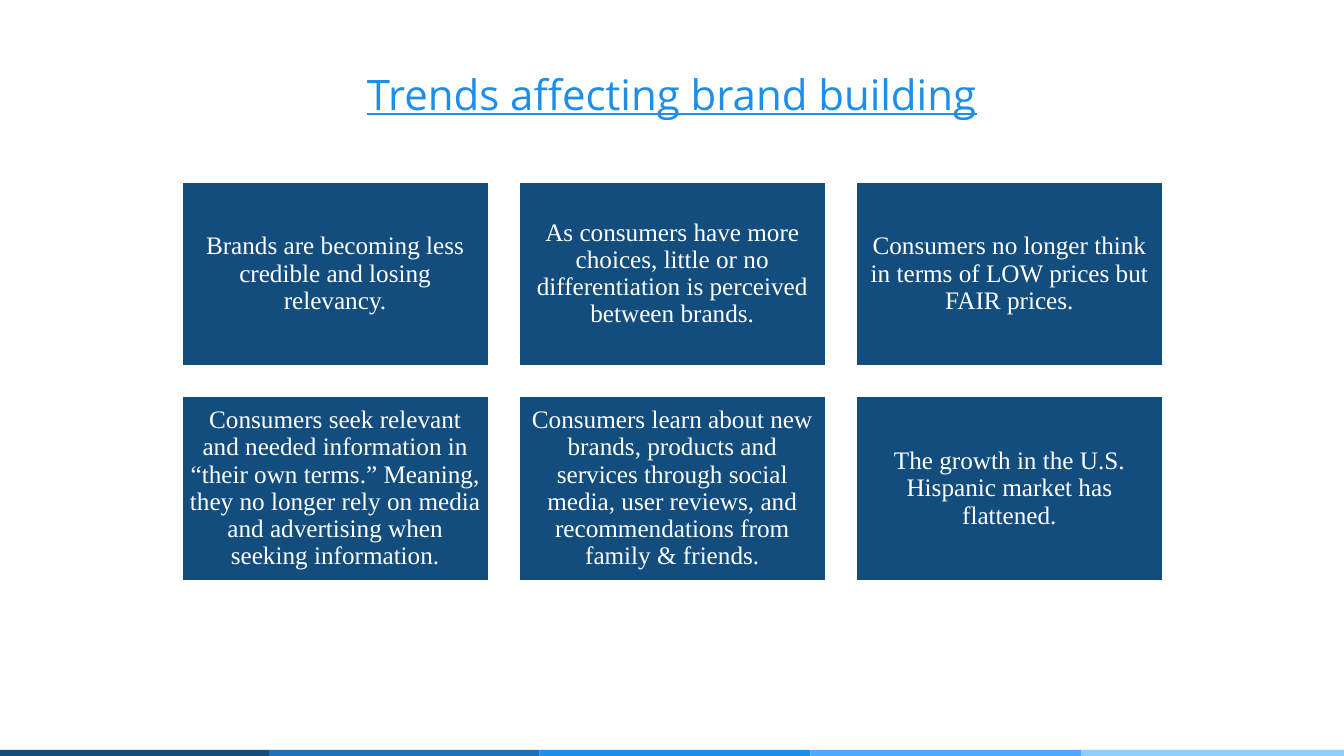
from pptx import Presentation
from pptx.dml.color import RGBColor
from pptx.enum.shapes import MSO_SHAPE
from pptx.enum.text import MSO_ANCHOR, PP_ALIGN
from pptx.util import Inches, Pt

COLORS = {
    "navy": "134D7E",
    "blue": "1971BB",
    "bright": "1D8EEA",
    "sky": "4EAAFF",
    "pale": "8BCEFF",
    "white": "FFFFFF",
}

TRENDS = [
    "Brands are becoming less credible and losing relevancy.",
    "As consumers have more choices, little or no differentiation is perceived between brands.",
    "Consumers no longer think in terms of LOW prices but FAIR prices.",
    "Consumers seek relevant and needed information in “their own terms.” Meaning, "
    "they no longer rely on media and advertising when seeking information.",
    "Consumers learn about new brands, products and services through social media, "
    "user reviews, and recommendations from family & friends.",
    "The growth in the U.S. Hispanic market has flattened.",
]


def add_rect(x, y, w, h, color):
    sp = slide.shapes.add_shape(
        MSO_SHAPE.RECTANGLE, Inches(x), Inches(y), Inches(w), Inches(h))
    sp.shadow.inherit = False
    sp.fill.solid()
    sp.fill.fore_color.rgb = RGBColor.from_string(COLORS[color])
    sp.line.fill.background()
    return sp


def write(sp, text, font, size, color, inset_x, inset_y):
    tf = sp.text_frame
    tf.word_wrap = True
    tf.vertical_anchor = MSO_ANCHOR.MIDDLE
    tf.margin_left = tf.margin_right = Inches(inset_x)
    tf.margin_top = tf.margin_bottom = Inches(inset_y)
    p = tf.paragraphs[0]
    p.alignment = PP_ALIGN.CENTER
    r = p.add_run()
    r.text = text
    r.font.name = font
    r.font.size = Pt(size)
    r.font.color.rgb = RGBColor.from_string(COLORS[color])
    return p, r


prs = Presentation()
prs.slide_width = Inches(26.67)
prs.slide_height = Inches(15)
slide = prs.slides.add_slide(prs.slide_layouts[6])

# Colour strip along the bottom
band_w = 5.37
for i, color in enumerate(["navy", "blue", "bright", "sky", "pale"]):
    add_rect(-0.03 + i * band_w, 14.88, band_w, 0.2, color)

# Title
title = slide.shapes.add_textbox(Inches(1.33), Inches(0.6), Inches(24), Inches(2.5))
p, r = write(title, "Trends affecting brand building", "Open Sans", 60, "bright", 0.24, 0.12)
r.font.underline = True

# Trend cards, three to a row
card_w, card_h, gap = 6.08, 3.65, 0.61
for i, trend in enumerate(TRENDS):
    row, col = divmod(i, 3)
    card = add_rect(3.61 + col * (card_w + gap), 3.61 + row * (card_h + gap),
                    card_w, card_h, "navy")
    card.line.color.rgb = RGBColor.from_string(COLORS["white"])
    card.line.width = Pt(2)
    p, r = write(card, trend, "Times New Roman", 36, "white", 0.15, 0.15)
    p.line_spacing = 0.9

prs.save("out.pptx")
